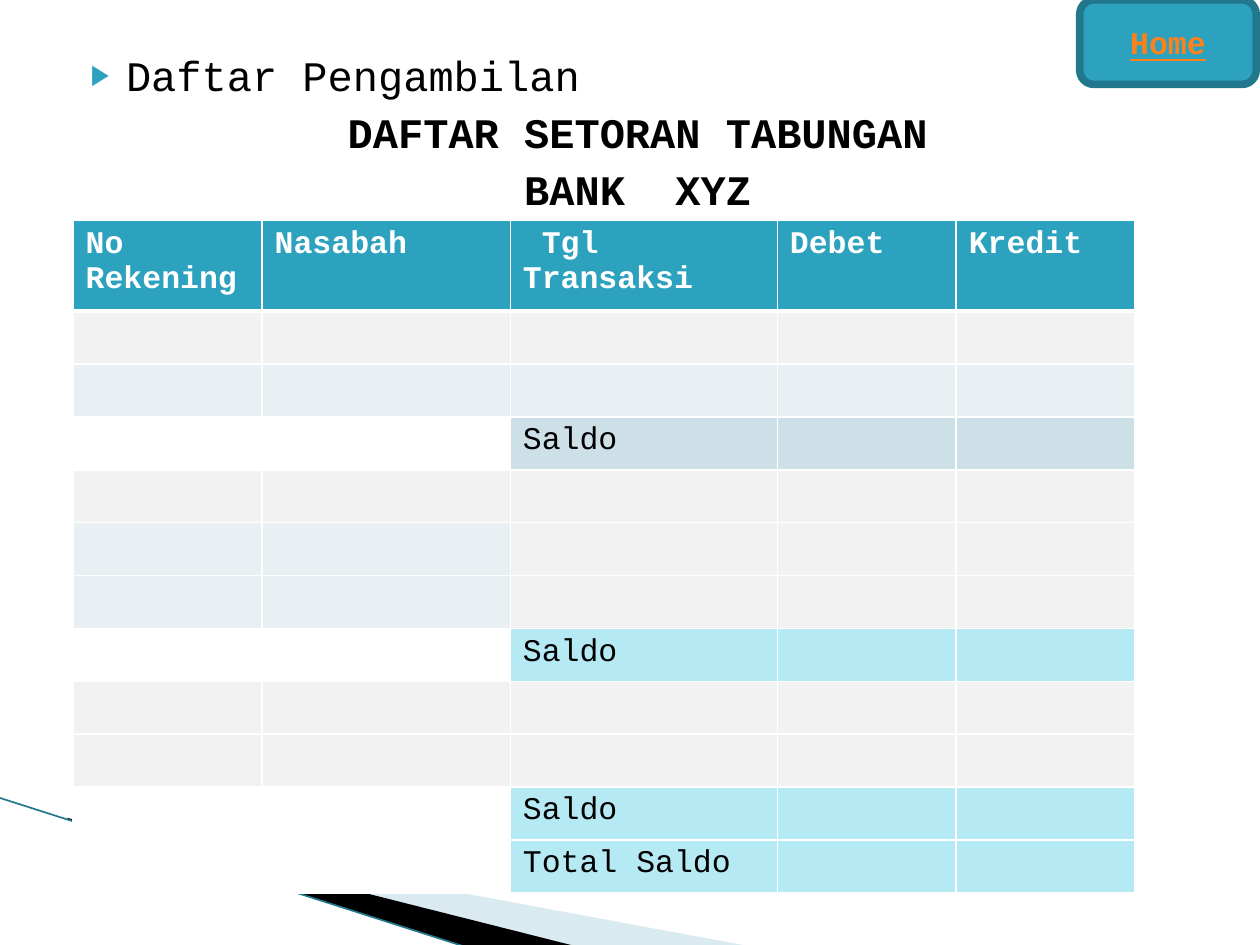
from lxml import etree
from pptx import Presentation
from pptx.dml.color import RGBColor
from pptx.enum.shapes import MSO_CONNECTOR, MSO_SHAPE
from pptx.enum.text import MSO_ANCHOR, MSO_AUTO_SIZE, PP_ALIGN
from pptx.oxml.ns import qn
from pptx.util import Inches, Pt


def rgb(value):
    return RGBColor.from_string(value)


def add(parent, tag, **attrs):
    return etree.SubElement(parent, qn(tag), **attrs)


FONT = "Courier New"
prs = Presentation()
prs.slide_width, prs.slide_height = Inches(10), Inches(7.5)
s = prs.slides.add_slide(prs.slide_layouts[1])
title = s.shapes.title
title.element.getparent().remove(title.element)

swooshes = [
    ("A0CBDC", 40, [(0.55, 6.51), (5.95, 7.51), (4.56, 7.51), (0.55, 6.5)]),
    ("000000", 100, [(0.53, 6.49), (4.57, 7.51), (3.72, 7.52), (0.54, 6.5)]),
]
for color, alpha, points in swooshes:
    points = [(Inches(x), Inches(y)) for x, y in points]
    fb = s.shapes.build_freeform(*points[0])
    fb.add_line_segments(points[1:])
    sp = fb.convert_to_shape()
    sp.shadow.inherit = False
    sp.fill.solid()
    sp.fill.fore_color.rgb = rgb(color)
    sp.line.fill.background()
    if alpha < 100:
        clr = sp.element.spPr.find(".//" + qn("a:srgbClr"))
        add(clr, "a:alpha", val=str(alpha * 1000))

line = s.shapes.add_connector(MSO_CONNECTOR.STRAIGHT, Inches(-0.01), Inches(6.33),
                              Inches(3.71), Inches(7.52))
line.line.color.rgb = rgb("21788D")
line.line.width = Pt(0.95)
add(line.element.spPr, "a:effectLst")

body = s.placeholders[1]
body.left, body.top = Inches(0.5), Inches(0.34)
body.width, body.height = Inches(9), Inches(6.23)
tf = body.text_frame
tf.auto_size = MSO_AUTO_SIZE.NONE
headings = ["Daftar Pengambilan", "DAFTAR SETORAN TABUNGAN", "BANK  XYZ"]
for i, text in enumerate(headings):
    p = tf.paragraphs[0] if i == 0 else tf.add_paragraph()
    p.text = text
    p.space_before = Pt(4 if i else 0)
    pPr = p._p.get_or_add_pPr()
    pPr.set("marL", str(Inches(0.12 if i else 0.4)))
    pPr.set("indent", str(Inches(0 if i else -0.28)))
    if i:
        p.alignment = PP_ALIGN.CENTER
        add(pPr, "a:buNone")
    else:
        add(add(pPr, "a:buClr"), "a:srgbClr", val="2DA2BF")
        add(pPr, "a:buSzPct", val="68000")
        add(pPr, "a:buChar", char="▶")
    p.font.name, p.font.size, p.font.bold = FONT, Pt(24), i > 0
    p.font.color.rgb = rgb("000000")

home = s.shapes.add_shape(MSO_SHAPE.FLOWCHART_ALTERNATE_PROCESS, Inches(8.57), Inches(0),
                          Inches(1.4), Inches(0.67))
home.shadow.inherit = False
home.fill.solid()
home.fill.fore_color.rgb = rgb("2DA2BF")
home.line.color.rgb = rgb("21788D")
home.line.width = Pt(4.33)
home.text_frame.vertical_anchor = MSO_ANCHOR.MIDDLE
p = home.text_frame.paragraphs[0]
p.text = "Home"
p.alignment = PP_ALIGN.CENTER
p.font.name, p.font.size, p.font.bold, p.font.underline = FONT, Pt(18), True, True
p.font.color.rgb = rgb("FF8119")

HEAD, GREY, PALE, BLUE, CYAN, WHITE = "2DA2BF", "F2F2F2", "E8F0F4", "CDE0E8", "B5E9F4", "FFFFFF"
header = ["No Rekening", "Nasabah", " Tgl Transaksi", "Debet", "Kredit"]
rows = [
    (header, HEAD, HEAD),
    ([], GREY, GREY),
    ([], PALE, PALE),
    (["", "", "Saldo"], None, BLUE),
    ([], GREY, GREY),
    ([], PALE, GREY),
    ([], PALE, GREY),
    (["", "", "Saldo"], WHITE, CYAN),
    ([], GREY, GREY),
    ([], GREY, GREY),
    (["", "", "Saldo"], WHITE, CYAN),
    (["", "", "Total Saldo"], WHITE, CYAN),
]
widths = [1.5, 1.97, 2.12, 1.42, 1.42]
table = s.shapes.add_table(len(rows), len(widths), Inches(0.58), Inches(1.75),
                           Inches(8.42), Inches(5.33)).table
for col, width in zip(table.columns, widths):
    col.width = Inches(width)
for r, (texts, left_fill, right_fill) in enumerate(rows):
    table.rows[r].height = Inches(0.42 if r else 0.72)
    for c in range(len(widths)):
        cell = table.cell(r, c)
        tcPr = cell._tc.get_or_add_tcPr()
        for side in "LRTB":
            thick = (r, side) in [(0, "B"), (1, "T")]
            ln = add(tcPr, "a:ln" + side, w=str(Pt(3 if thick else 1)))
            add(add(ln, "a:solidFill"), "a:srgbClr", val=WHITE)
        fill = left_fill if c < 2 else right_fill
        if fill:
            cell.fill.solid()
            cell.fill.fore_color.rgb = rgb(fill)
        else:
            cell.fill.background()
        p = cell.text_frame.paragraphs[0]
        if c < len(texts) and texts[c]:
            p.text = texts[c]
        p.font.name, p.font.size, p.font.bold = FONT, Pt(18), r == 0
        p.font.color.rgb = rgb("000000" if r else WHITE)

prs.save("out.pptx")
